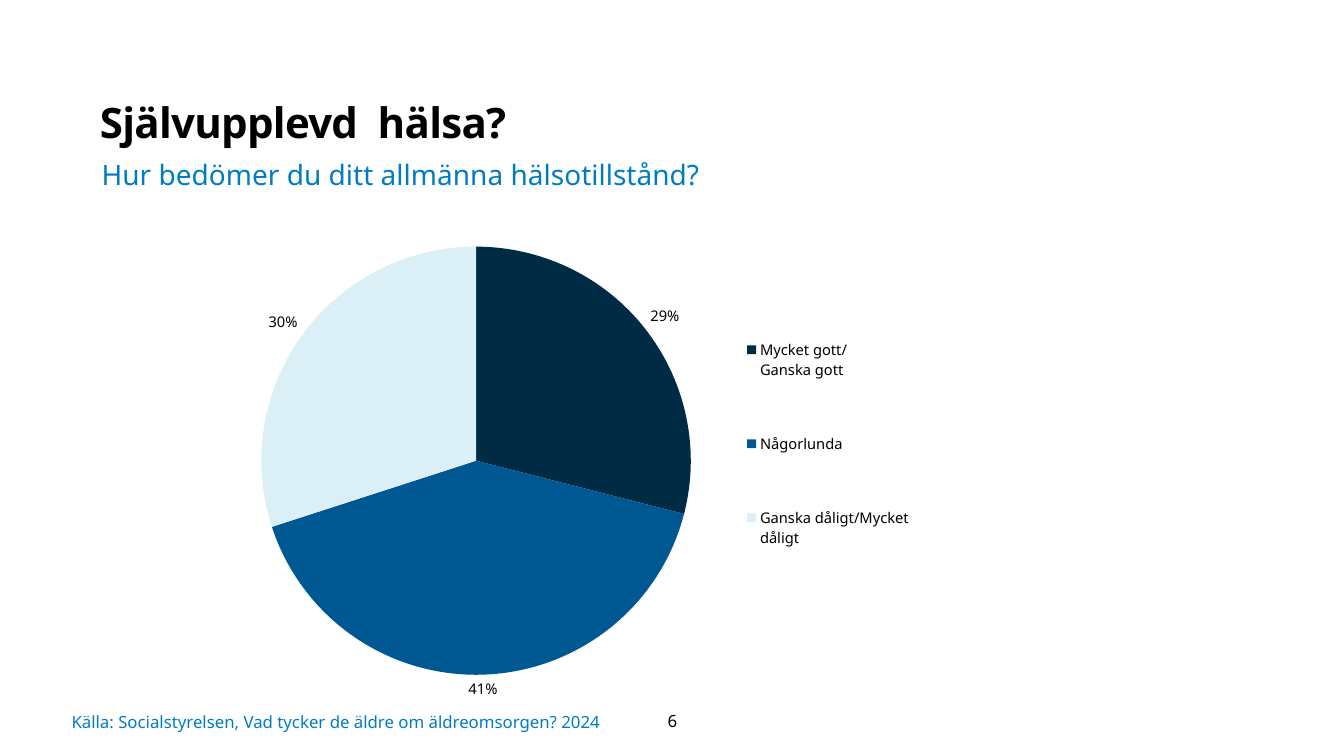
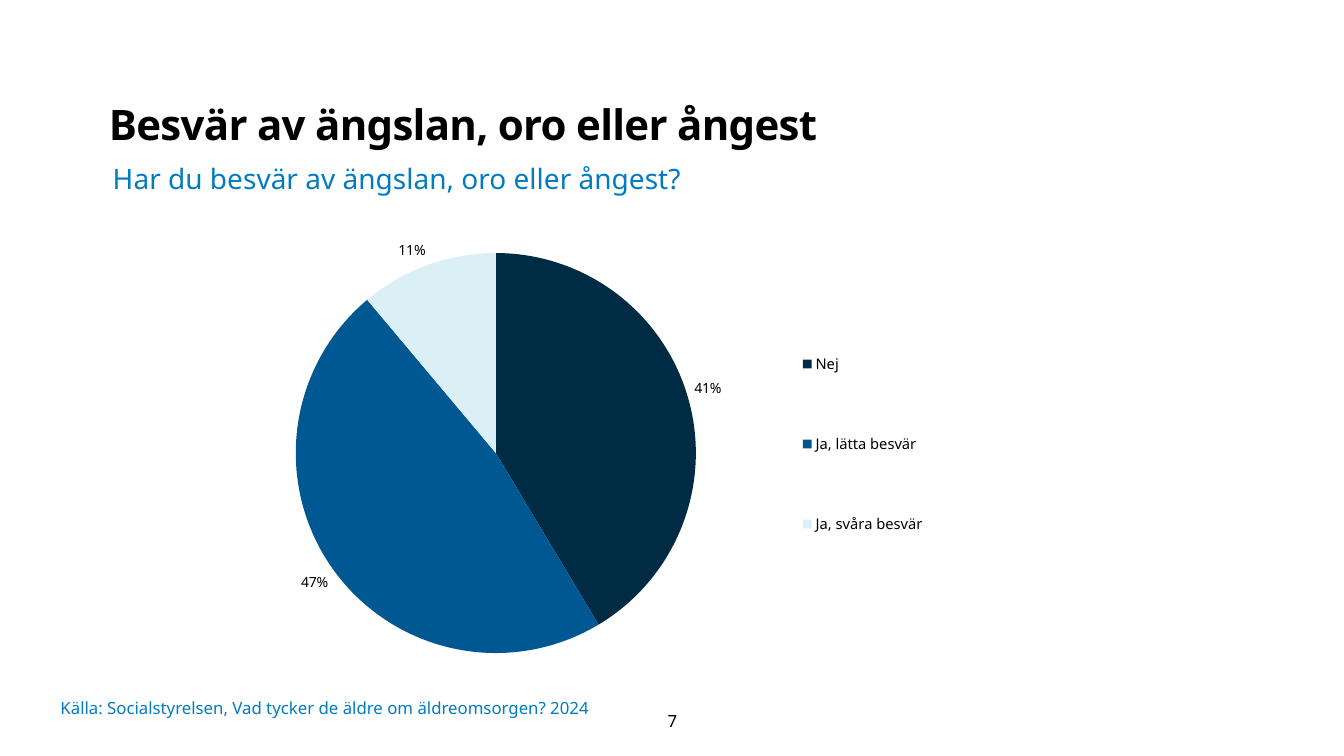
from lxml.etree import SubElement
from pptx import Presentation
from pptx.chart.data import CategoryChartData as Data
from pptx.dml.color import RGBColor
from pptx.enum.chart import XL_CHART_TYPE as Kind
from pptx.enum.chart import XL_LABEL_POSITION as Spot
from pptx.enum.chart import XL_LEGEND_POSITION as Side
from pptx.enum.text import MSO_ANCHOR as Anchor
from pptx.enum.text import MSO_AUTO_SIZE as Fit
from pptx.enum.text import PP_ALIGN as Align
from pptx.oxml.ns import qn
from pptx.util import Inches, Pt

BLACK = RGBColor(0x00, 0x00, 0x00)
BLUE = RGBColor(0x01, 0x7C, 0xC1)
SLICES = (RGBColor(0x00, 0x2B, 0x45), RGBColor(0x00, 0x58, 0x92),
          RGBColor(0xDB, 0xF0, 0xF6))
FACE = "Noto Sans"
SOURCE = "Källa: Socialstyrelsen, Vad tycker de äldre om äldreomsorgen? 2024"


def style(font, size, color=BLACK, bold=False):
    look = {"name": FACE, "size": Pt(size), "bold": bold}
    for key, val in look.items():
        setattr(font, key, val)
    font.color.rgb = color


def place(node, index, box, inner=False):
    """Give a chart part a manual layout in fractions of the chart."""
    for old in node.findall(qn("c:layout")):
        node.remove(old)
    outer = SubElement(node, qn("c:layout"))
    node.insert(index, outer)
    man = SubElement(outer, qn("c:manualLayout"))
    rules = [("layoutTarget", "inner")] if inner else []
    rules += [("xMode", "edge"), ("yMode", "edge")]
    rules += zip("xywh", box)
    for tag, val in rules:
        SubElement(man, qn(f"c:{tag}"), val=str(val))


class Deck:
    def __init__(self):
        self.prs = Presentation()
        self.prs.slide_width = Inches(13.33)
        self.prs.slide_height = Inches(7.5)
        self.page = None

    def add(self):
        self.page = self.prs.slides.add_slide(self.prs.slide_layouts[5])

    def fill(self, frame, text, size, color, align=Align.LEFT, bold=False):
        frame.word_wrap = True
        par = frame.paragraphs[0]
        par.alignment = align
        run = par.add_run()
        run.text = text
        style(run.font, size, color, bold)
        return par

    def title(self, text, at):
        shape = self.page.shapes.title
        for key, val in zip(("left", "top", "width", "height"), at):
            setattr(shape, key, Inches(val))
        frame = shape.text_frame
        form = {"margin_left": 0, "margin_top": 0,
                "margin_right": Inches(0.1), "margin_bottom": Inches(0.05),
                "vertical_anchor": Anchor.TOP, "auto_size": Fit.NONE}
        for key, val in form.items():
            setattr(frame, key, val)
        par = self.fill(frame, text, 30, BLACK, bold=True)
        par.line_spacing = 1.1
        par.runs[0].font._element.set("spc", "-50")

    def text(self, text, at, size, color, align=Align.LEFT, **form):
        frame = self.page.shapes.add_textbox(*map(Inches, at)).text_frame
        for key, val in form.items():
            setattr(frame, key, val)
        self.fill(frame, text, size, color, align)

    def source(self, at):
        self.text(SOURCE, at, 12, BLUE, vertical_anchor=Anchor.MIDDLE,
                  margin_left=0, margin_top=0, margin_right=0,
                  margin_bottom=0)

    def number(self, num):
        self.text(str(num), (6.16, 6.95, 1.02, 0.4), 12, BLACK, Align.CENTER,
                  vertical_anchor=Anchor.MIDDLE)

    def pie(self, at, cats, vals, plot, key, size):
        data = Data()
        data.categories = cats
        data.add_series("Series 1", vals)
        chart = self.page.shapes.add_chart(
            Kind.PIE, *map(Inches, at), data).chart
        chart.has_title = False
        style(chart.font, 10)

        # Slices and percentages
        pie = chart.plots[0]
        pie.vary_by_categories = True
        for i, color in enumerate(SLICES):
            fill = pie.series[0].points[i].format.fill
            fill.solid()
            fill.fore_color.rgb = color
        pie.has_data_labels = True
        labels = pie.data_labels
        form = {"show_percentage": True, "show_value": False,
                "number_format": "0%", "number_format_is_linked": False,
                "position": Spot.OUTSIDE_END}
        for name, val in form.items():
            setattr(labels, name, val)
        style(labels.font, size)

        # Legend and positions
        chart.has_legend = True
        legend = chart.legend
        legend.position = Side.RIGHT
        legend.include_in_layout = False
        style(legend.font, 10.5)
        place(legend._element, 1, key)
        area = chart._chartSpace.find(".//" + qn("c:plotArea"))
        place(area, 0, plot, inner=True)


def main():
    deck = Deck()

    # General health
    deck.add()
    deck.title("Självupplevd  hälsa?", (0.99, 0.91, 9.83, 0.61))
    deck.text("Hur bedömer du ditt allmänna hälsotillstånd?",
              (0.91, 1.51, 7.88, 0.44), 20, BLUE, auto_size=Fit.SHAPE_TO_FIT_TEXT)
    deck.pie((2.06, 2.11, 8.73, 4.84),
             ("Mycket gott/\nGanska gott", "Någorlunda",
              "Ganska dåligt/Mycket dåligt"),
             (29, 41, 30), (0.06, 0.07, 0.49, 0.88),
             (0.6, 0.15, 0.21, 0.65), 10.5)
    deck.source((0.71, 6.95, 5.45, 0.42))
    deck.number(6)

    # Anxiety
    deck.add()
    deck.title("Besvär av ängslan, oro eller ångest", (1.08, 0.93, 9.74, 0.62))
    deck.text("Har du besvär av ängslan, oro eller ångest?",
              (1.02, 1.55, 8.87, 0.44), 20, BLUE, auto_size=Fit.SHAPE_TO_FIT_TEXT)
    deck.pie((1.46, 2.24, 9.1, 4.51),
             ("Nej", "Ja, lätta besvär", "Ja, svåra besvär"),
             (41, 47, 11), (0.16, 0.06, 0.44, 0.88),
             (0.68, 0.15, 0.2, 0.66), 10)
    deck.source((0.6, 6.75, 9.27, 0.55))
    deck.number(7)

    deck.prs.save("out.pptx")


if __name__ == "__main__":
    main()
